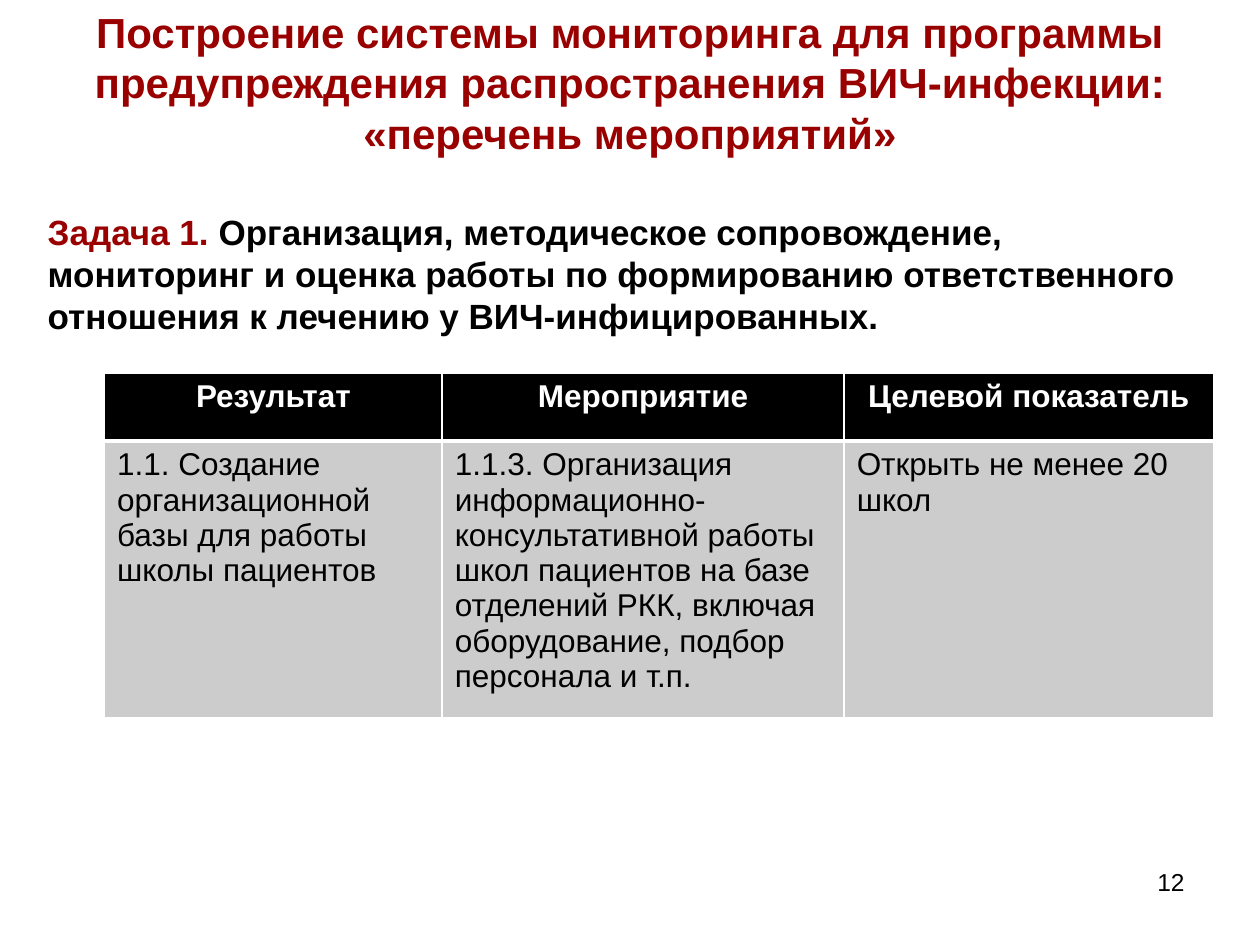
from lxml.etree import SubElement
from pptx import Presentation
from pptx.dml.color import RGBColor
from pptx.enum.text import MSO_ANCHOR, PP_ALIGN
from pptx.oxml.ns import qn
from pptx.util import Inches, Pt

RED = RGBColor(0x99, 0, 0)
BLACK = RGBColor(0, 0, 0)
WHITE = RGBColor(255, 255, 255)
GRAY = RGBColor(0xCC, 0xCC, 0xCC)

deck = Presentation()
deck.slide_width, deck.slide_height = Inches(10), Inches(7.5)
slide = deck.slides.add_slide(deck.slide_layouts[6])


def write(frame, lines, align, size, bold):
    frame.word_wrap = True
    for row, line in enumerate(lines):
        para = frame.add_paragraph() if row else frame.paragraphs[0]
        para.alignment = align
        for text, color in line:
            run = para.add_run()
            run.text = text
            form = {"name": "Arial", "size": Pt(size), "bold": bold}
            for key, value in form.items():
                setattr(run.font, key, value)
            run.font.color.rgb = color


def edge(cell, side, width):
    line = SubElement(cell._tc.get_or_add_tcPr(), qn("a:" + side), w=str(Pt(width)))
    fill = SubElement(line, qn("a:solidFill"))
    SubElement(fill, qn("a:srgbClr"), val=str(WHITE))


title = [
    [("Построение системы мониторинга для программы предупреждения "
      "распространения ВИЧ-инфекции:", RED)],
    [("«перечень мероприятий»", RED)],
]
task = [[
    ("Задача 1. ", RED),
    ("Организация, методическое сопровождение, мониторинг и оценка работы по "
     "формированию ответственного отношения к лечению у ВИЧ-инфицированных.", BLACK),
]]
texts = [
    ((0.5, 0.13, 9, 1.42), title, PP_ALIGN.CENTER, 24, True,
     {"vertical_anchor": MSO_ANCHOR.MIDDLE, "margin_bottom": Inches(0.43)}),
    ((0.28, 1.62, 9.45, 1.11), task, PP_ALIGN.LEFT, 20, True, {}),
    ((7.17, 6.83, 2.33, 0.52), [[("12", BLACK)]], PP_ALIGN.RIGHT, 14, False, {}),
]
for place, lines, align, size, bold, form in texts:
    frame = slide.shapes.add_textbox(*map(Inches, place)).text_frame
    for key, value in form.items():
        setattr(frame, key, value)
    write(frame, lines, align, size, bold)

cols = [2.68, 3.19, 2.93]
rows = [0.54, 2.2]
cells = [
    ["Результат", "Мероприятие", "Целевой показатель"],
    ["1.1. Создание организационной базы для работы школы пациентов",
     "1.1.3. Организация информационно-консультативной работы школ пациентов "
     "на базе отделений РКК, включая оборудование, подбор персонала и т.п.",
     "Открыть не менее 20 школ"],
]
looks = [
    (BLACK, WHITE, PP_ALIGN.CENTER, True, {"lnL": 1, "lnR": 1, "lnT": 1, "lnB": 3}),
    (GRAY, BLACK, PP_ALIGN.LEFT, False, {"lnL": 1, "lnR": 1, "lnT": 3, "lnB": 1}),
]
table = slide.shapes.add_table(
    len(rows), len(cols), Inches(0.83), Inches(2.96),
    Inches(sum(cols)), Inches(sum(rows))).table
for col, width in zip(table.columns, cols):
    col.width = Inches(width)
for row, (high, words, look) in enumerate(zip(rows, cells, looks)):
    table.rows[row].height = Inches(high)
    back, ink, align, bold, sides = look
    for col, text in enumerate(words):
        cell = table.cell(row, col)
        write(cell.text_frame, [[(text, ink)]], align, 18, bold)
        for side, width in sides.items():
            edge(cell, side, width)
        cell.fill.solid()
        cell.fill.fore_color.rgb = back

deck.save("out.pptx")
